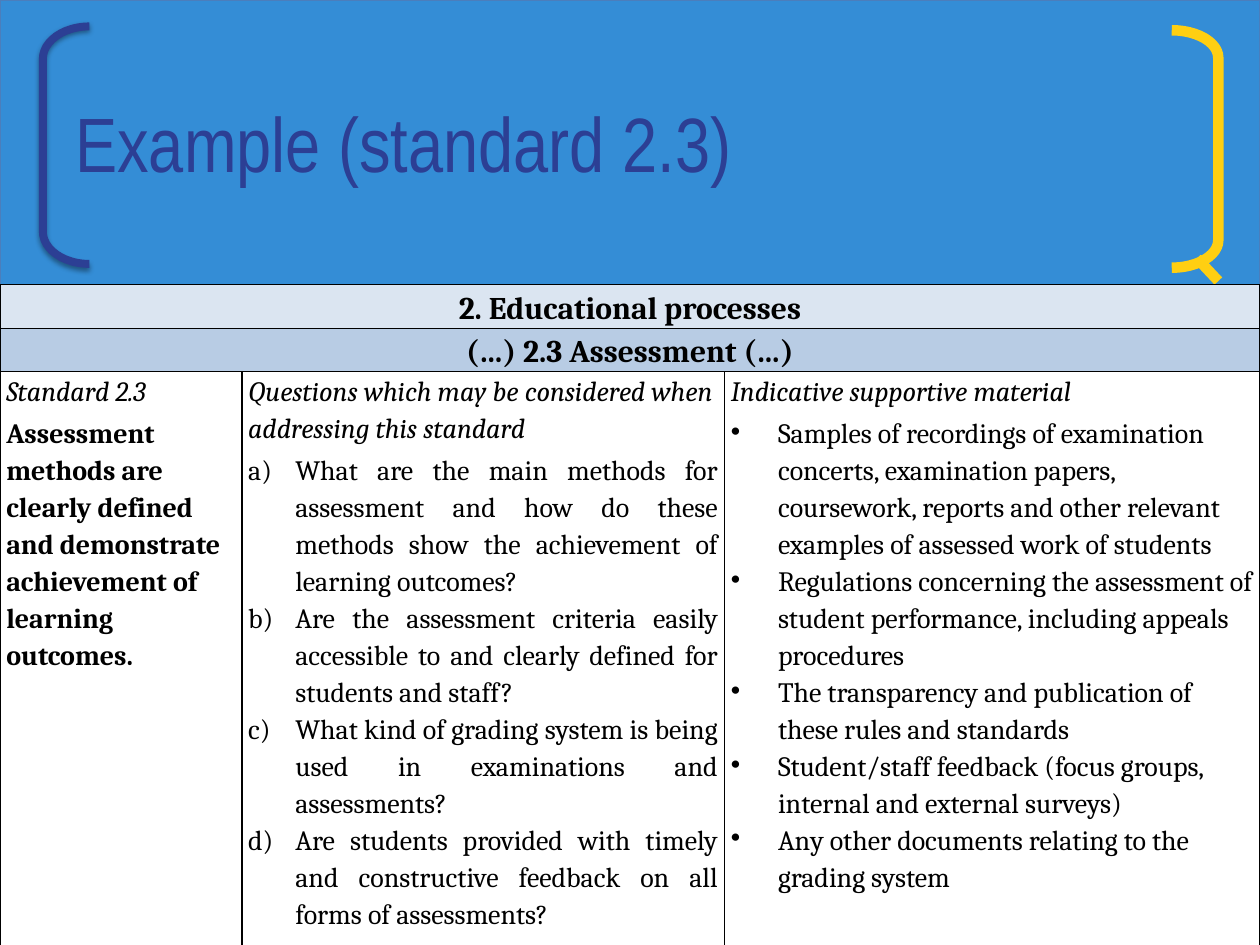
from dataclasses import dataclass

from lxml.etree import SubElement
from pptx import Presentation
from pptx.dml.color import RGBColor
from pptx.enum.shapes import MSO_CONNECTOR as Connector, MSO_SHAPE as Shape
from pptx.enum.text import MSO_ANCHOR as Anchor, PP_ALIGN as Align
from pptx.oxml.ns import qn
from pptx.util import Pt


@dataclass(frozen=True)
class Theme:
    band: str = "348DD6"
    band_edge: str = "4B7EBC"
    navy: str = "2C3F94"
    yellow: str = "FFCF12"
    ink: str = "000000"
    paper: str = "FFFFFF"
    chapter: str = "DBE5F1"
    section: str = "B8CCE4"
    title_font: str = "Arial Narrow"
    table_font: str = "Cambria"
    title_size: float = 44
    heading_size: float = 18
    body_size: float = 16


THEME = Theme()
INDENT = 27
COLUMNS = (138.2, 275.8, 306)
ROWS = (24.5, 24.5, 328.3)

STANDARD = "Assessment methods are clearly defined and demonstrate achievement of learning outcomes."
QUESTIONS = (
    "What are the main methods for assessment and how do these methods show the achievement of learning outcomes?",
    "Are the assessment criteria easily accessible to and clearly defined for students and staff?",
    "What kind of grading system is being used in examinations and assessments?",
    "Are students provided with timely and constructive feedback on all forms of assessments?",
)
MATERIALS = (
    "Samples of recordings of examination concerts, examination papers, coursework, reports "
    "and other relevant examples of assessed work of students",
    "Regulations concerning the assessment of student performance, including appeals procedures",
    "The transparency and publication of these rules and standards",
    "Student/staff feedback (focus groups, internal and external surveys)",
    "Any other documents relating to the grading system",
)


def rgb(value):
    return RGBColor.from_string(value)


def set_line(item, color, width):
    item.line.color.rgb = rgb(color)
    item.line.width = Pt(width)


def add_band(page):
    band = page.shapes.add_shape(Shape.RECTANGLE, 0, 0, Pt(720), Pt(167.8))
    band.shadow.inherit = False
    band.fill.solid()
    band.fill.fore_color.rgb = rgb(THEME.band)
    set_line(band, THEME.band_edge, 0.75)


def add_bracket(page, kind, left, top, curve, color, width):
    bracket = page.shapes.add_shape(kind, Pt(left), Pt(top), Pt(26.6), Pt(135.7))
    bracket.shadow.inherit = False
    bracket.adjustments[0] = curve
    bracket.fill.background()
    set_line(bracket, color, width)
    return bracket


def add_soft_shadow(shape):
    effects = shape._element.spPr.find(qn("a:effectLst"))
    shadow = SubElement(effects, qn("a:outerShdw"), blurRad=str(Pt(3.1)),
                        dist=str(Pt(1.6)), dir="5400000", rotWithShape="0")
    color = SubElement(shadow, qn("a:srgbClr"), val=THEME.ink)
    SubElement(color, qn("a:alpha"), val="38000")


def add_tail(page):
    tail = page.shapes.add_connector(Connector.STRAIGHT, Pt(696.2), Pt(160.6), Pt(684), Pt(147.6))
    set_line(tail, THEME.yellow, 6)
    SubElement(tail._element.spPr, qn("a:effectLst"))


def style_font(font, name, size, color, bold=False, italic=False):
    font.name, font.size = name, Pt(size)
    font.bold, font.italic = bold, italic
    font.color.rgb = rgb(color)


def add_title(page, text):
    box = page.shapes.add_textbox(Pt(36), Pt(36), Pt(648), Pt(90))
    frame = box.text_frame
    frame.word_wrap = True
    frame.vertical_anchor = Anchor.MIDDLE
    frame.text = text
    style_font(frame.paragraphs[0].runs[0].font, THEME.title_font, THEME.title_size, THEME.navy)


def format_cell(cell, fill):
    # Borders come before the fill in the cell properties
    properties = cell._tc.get_or_add_tcPr()
    for side in ("lnL", "lnR", "lnT", "lnB"):
        border = SubElement(properties, qn(f"a:{side}"), w=str(Pt(1)))
        paint = SubElement(border, qn("a:solidFill"))
        SubElement(paint, qn("a:srgbClr"), val=THEME.ink)
    cell.fill.solid()
    cell.fill.fore_color.rgb = rgb(fill)
    cell.margin_left = cell.margin_right = Pt(3.6)
    cell.margin_top = cell.margin_bottom = 0


def write_para(para, text, size, align=Align.LEFT, after=0, bold=False, italic=False):
    para.text = text
    para.alignment = align
    para.line_spacing = 1.15
    para.space_after = Pt(after)
    style_font(para.runs[0].font, THEME.table_font, size, THEME.ink, bold, italic)


def add_marker(para, tag, **values):
    properties = para._p.get_or_add_pPr()
    properties.set("marL", str(Pt(INDENT)))
    properties.set("indent", str(Pt(-INDENT)))
    SubElement(properties, qn(f"a:{tag}"), **values)


def write_heading(cell, text):
    write_para(cell.text_frame.paragraphs[0], text, THEME.body_size, after=3, italic=True)


def write_list(cell, items, align, tag, **values):
    for item in items:
        para = cell.text_frame.add_paragraph()
        add_marker(para, tag, **values)
        write_para(para, item, THEME.body_size, align)


def add_standard_table(page):
    frame = page.shapes.add_table(len(ROWS), len(COLUMNS), 0, Pt(162.7),
                                  Pt(sum(COLUMNS)), Pt(sum(ROWS)))
    table = frame.table
    table.first_row = table.horz_banding = False
    for column, width in zip(table.columns, COLUMNS):
        column.width = Pt(width)
    for row, height, fill in zip(table.rows, ROWS, (THEME.chapter, THEME.section, THEME.paper)):
        row.height = Pt(height)
        for cell in row.cells:
            format_cell(cell, fill)

    # Full-width heading rows
    for index, text in enumerate(("2. Educational processes", "(…) 2.3 Assessment (…)")):
        cell = table.cell(index, 0)
        cell.merge(table.cell(index, len(COLUMNS) - 1))
        write_para(cell.text_frame.paragraphs[0], text, THEME.heading_size, Align.CENTER, bold=True)
    table.cell(0, 0).vertical_anchor = Anchor.MIDDLE

    # Standard, questions and supportive material
    standard, questions, materials = table.rows[2].cells
    write_heading(standard, "Standard 2.3")
    write_para(standard.text_frame.add_paragraph(), STANDARD, THEME.body_size, bold=True)
    write_heading(questions, "Questions which may be considered when addressing this standard")
    write_list(questions, QUESTIONS, Align.JUSTIFY, "buAutoNum", type="alphaLcParenR")
    write_heading(materials, "Indicative supportive material")
    write_list(materials, MATERIALS, Align.LEFT, "buChar", char="•")


def main():
    deck = Presentation()
    deck.slide_width, deck.slide_height = Pt(720), Pt(540)
    page = deck.slides.add_slide(deck.slide_layouts[6])

    # Title band with brackets
    add_band(page)
    left = add_bracket(page, Shape.LEFT_BRACKET, 24.5, 15.1, 0.7, THEME.navy, 4.5)
    add_soft_shadow(left)
    add_bracket(page, Shape.RIGHT_BRACKET, 669.6, 17.3, 0.59, THEME.yellow, 6)
    add_tail(page)
    add_title(page, "Example (standard 2.3)")

    add_standard_table(page)
    deck.save("out.pptx")


if __name__ == "__main__":
    main()
